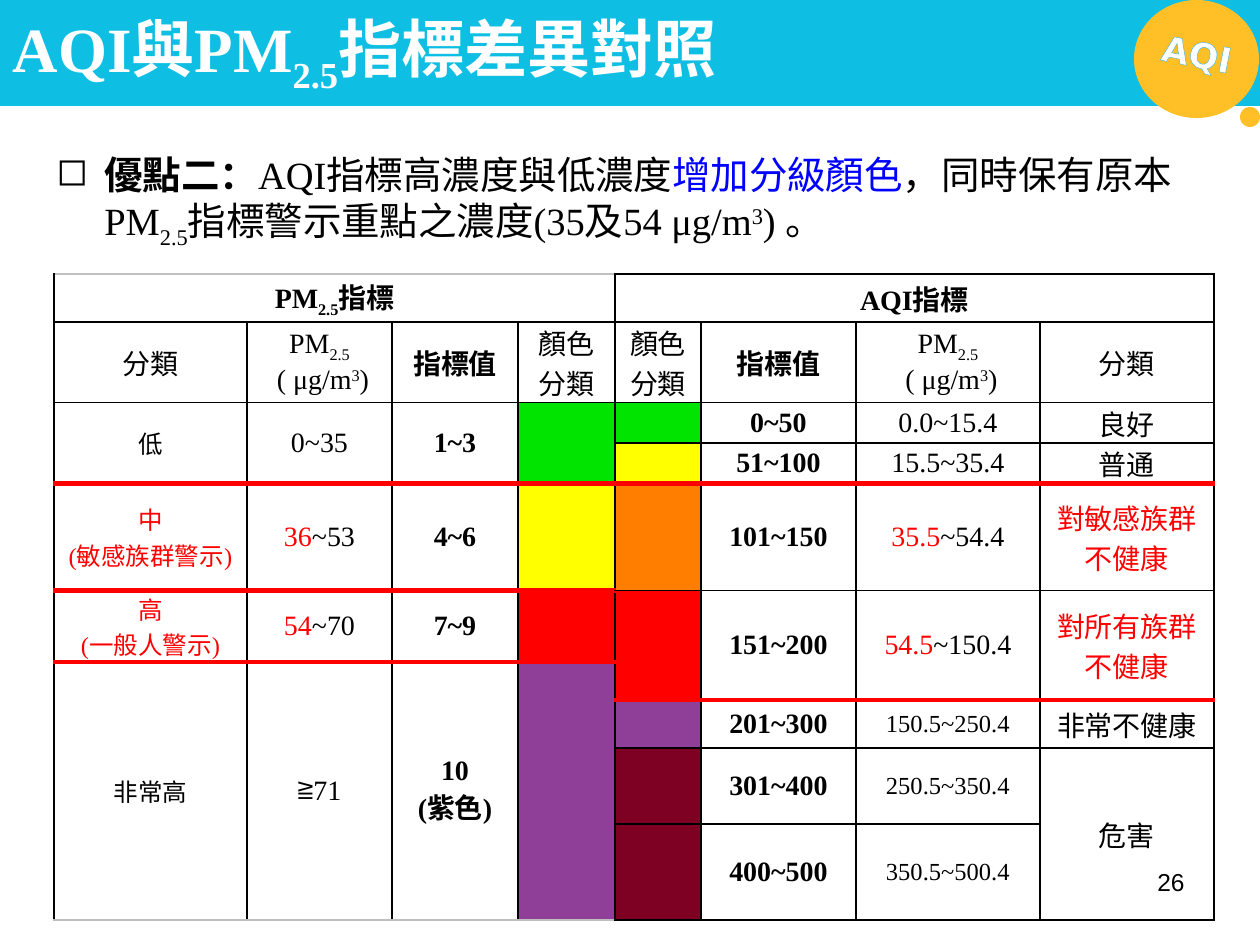
from dataclasses import dataclass

from lxml.etree import SubElement
from pptx import Presentation
from pptx.dml.color import RGBColor
from pptx.enum.shapes import MSO_SHAPE
from pptx.enum.text import MSO_ANCHOR, PP_ALIGN
from pptx.oxml.ns import qn
from pptx.util import Emu, Pt


@dataclass(frozen=True)
class Theme:
    """Colours, fonts and type sizes of the slide."""
    band: str = "0FBEE3"
    badge: str = "FEBF27"
    badge_outline: str = "4EB3CF"
    white: str = "FFFFFF"
    black: str = "000000"
    blue: str = "0000FF"
    red: str = "FF0000"
    grey: str = "BFBFBF"
    green: str = "00E400"
    yellow: str = "FFFF00"
    orange: str = "FF7E00"
    purple: str = "8F3F97"
    maroon: str = "7E0023"
    serif: str = "Times New Roman"
    sans: str = "Arial"
    badge_font: str = "DejaVu Sans"
    title: int = 36
    body: int = 22
    badge_size: int = 20
    table: int = 16
    small: int = 14


THEME = Theme()
SUB, SUP = -25, 30
COLUMNS = [193, 145, 126, 97, 86, 155, 184, 174]
ROWS = [48, 66, 33, 34, 96, 58, 38, 48, 76, 96]
LEFT_HALF, RIGHT_HALF = range(4), range(4, 8)
RED_LINES = {4: range(8), 5: LEFT_HALF, 6: LEFT_HALF, 7: RIGHT_HALF}
GREY_LINES = {0: LEFT_HALF, 10: LEFT_HALF}


@dataclass(frozen=True)
class Span:
    """A piece of text whose look differs from its neighbours."""
    text: str
    color: str = ""
    baseline: int = 0
    bold: bool = False


@dataclass(frozen=True)
class Entry:
    """One table cell with its paragraphs, fill and extent."""
    row: int
    column: int
    paragraphs: tuple = ()
    fill: str = THEME.white
    size: int = THEME.table
    bold: bool = False
    color: str = THEME.black
    height: int = 1
    width: int = 1


def px(length):
    """Turn slide pixels into EMU."""
    return Emu(round(length * 914400 / 126))


def add_runs(paragraph, spans, size, color=THEME.black, bold=False, font=THEME.serif):
    """Add each string or Span to the paragraph as a run."""
    for item in spans:
        span = Span(item) if isinstance(item, str) else item
        run = paragraph.add_run()
        run.text = span.text
        run.font.name = font
        run.font.size = Pt(size)
        run.font.bold = bold or span.bold
        run.font.color.rgb = RGBColor.from_string(span.color or color)
        if span.baseline:
            run._r.get_or_add_rPr().set("baseline", str(span.baseline * 1000))


def add_solid(slide, kind, box, color):
    """Add a plain filled shape without a line."""
    shape = slide.shapes.add_shape(kind, *map(px, box))
    shape.shadow.inherit = False
    shape.fill.solid()
    shape.fill.fore_color.rgb = RGBColor.from_string(color)
    shape.line.fill.background()


def add_text(slide, box, spans, size, align=PP_ALIGN.LEFT, **look):
    """Add a wrapping text box of one paragraph."""
    shape = slide.shapes.add_textbox(*map(px, box))
    shape.text_frame.word_wrap = True
    paragraph = shape.text_frame.paragraphs[0]
    paragraph.alignment = align
    add_runs(paragraph, spans, size, **look)
    return shape


def add_line(parent, tag, color, width):
    """Append a solid line element."""
    line = SubElement(parent, qn(tag), w=str(Pt(width)))
    fill = SubElement(line, qn("a:solidFill"))
    SubElement(fill, qn("a:srgbClr"), val=color)
    return line


def add_badge(slide):
    """Add the round badge with its tilted, outlined label."""
    add_solid(slide, MSO_SHAPE.OVAL, (1134, 0, 125, 118), THEME.badge)
    label = add_text(slide, (1130, 26, 134, 55), ["AQI"], THEME.badge_size, PP_ALIGN.CENTER,
                     color=THEME.white, bold=True, font=THEME.badge_font)
    label.rotation = 11.4
    properties = label.text_frame.paragraphs[0].runs[0]._r.get_or_add_rPr()
    properties.insert(0, add_line(properties, "a:ln", THEME.badge_outline, 0.8))
    add_solid(slide, MSO_SHAPE.OVAL, (1240, 107, 20, 20), THEME.badge)


def set_title(slide, spans):
    """Place and fill the title above the band."""
    title = slide.shapes.title
    title.left, title.top, title.width, title.height = map(px, (0, 0, 1126, 106))
    title.text_frame.vertical_anchor = MSO_ANCHOR.MIDDLE
    paragraph = title.text_frame.paragraphs[0]
    paragraph.alignment = PP_ALIGN.LEFT
    add_runs(paragraph, spans, THEME.title, THEME.white, True)
    slide.shapes._spTree.append(title._element)


def add_bullet(paragraph, character, indent):
    """Give the paragraph a hanging bullet."""
    properties = paragraph._p.get_or_add_pPr()
    properties.set("marL", str(px(indent)))
    properties.set("indent", str(-px(indent)))
    SubElement(properties, qn("a:buChar"), char=character)


def rule_style(boundary, column):
    """Return colour and width of a horizontal table rule."""
    if column in RED_LINES.get(boundary, ()):
        return THEME.red, 3
    return (THEME.grey if column in GREY_LINES.get(boundary, ()) else THEME.black), 1


def set_borders(table, entry):
    """Draw the outer edges of an entry on all cells it covers."""
    bottom, right = entry.row + entry.height, entry.column + entry.width
    for row in range(entry.row, bottom):
        for column in range(entry.column, right):
            origin = (row, column) == (entry.row, entry.column)
            properties = table.cell(row, column)._tc.get_or_add_tcPr()
            edges = [
                ("a:lnL", column == entry.column, (THEME.black, 1)),
                ("a:lnR", origin or column == right - 1, (THEME.black, 1)),
                ("a:lnT", row == entry.row, rule_style(entry.row, column)),
                ("a:lnB", origin or row == bottom - 1, rule_style(bottom, column)),
            ]
            for tag, visible, style in edges:
                if visible:
                    add_line(properties, tag, *style)


def fill_cell(table, entry):
    """Merge, border, colour and write one table entry."""
    cell = table.cell(entry.row, entry.column)
    if entry.height * entry.width > 1:
        cell.merge(table.cell(entry.row + entry.height - 1, entry.column + entry.width - 1))
    set_borders(table, entry)
    cell.fill.solid()
    cell.fill.fore_color.rgb = RGBColor.from_string(entry.fill)
    cell.vertical_anchor = MSO_ANCHOR.MIDDLE
    cell.margin_left = cell.margin_right = px(9)
    cell.margin_top = cell.margin_bottom = 0
    frame = cell.text_frame
    for index, spans in enumerate(entry.paragraphs):
        paragraph = frame.add_paragraph() if index else frame.paragraphs[0]
        paragraph.alignment = PP_ALIGN.CENTER
        if entry.row == 9:
            paragraph.space_after = Pt(10)
        add_runs(paragraph, spans, entry.size, entry.color, entry.bold)


def header_entries():
    """Return the entries of the two heading rows."""
    unit = (["PM", Span("2.5", baseline=SUB)], [" ( μg/m", Span("3", baseline=SUP), ")"])
    kind, value, color = (["分類"],), (["指標值"],), (["顏色"], ["分類"])
    labels = [kind, unit, value, color, color, value, unit, kind]
    heading = ["PM", Span("2.5", baseline=SUB), "指標"]
    return [Entry(0, 0, (heading,), bold=True, width=4),
            Entry(0, 4, (["AQI指標"],), bold=True, width=4),
            *(Entry(1, column, label, bold=label is value) for column, label in enumerate(labels))]


def level_entries():
    """Return the entries of both index scales."""
    def warned(start, end):
        return [Span(start, THEME.red), end]

    old_levels = [
        (2, 2, ["低"], ["0~35"], ["1~3"], THEME.green, THEME.black),
        (4, 1, ["中", "(敏感族群警示)"], warned("36", "~53"), ["4~6"], THEME.yellow, THEME.red),
        (5, 1, ["高", "(一般人警示)"], warned("54", "~70"), ["7~9"], THEME.red, THEME.red),
        (6, 4, ["非常高"], ["≧71"], ["10", "(紫色)"], THEME.purple, THEME.black),
    ]
    new_levels = [
        (2, 1, THEME.green, "0~50", ["0.0~15.4"], "良好", 1),
        (3, 1, THEME.yellow, "51~100", ["15.5~35.4"], "普通", 1),
        (4, 1, THEME.orange, "101~150", warned("35.5", "~54.4"), "對敏感族群不健康", 1),
        (5, 2, THEME.red, "151~200", warned("54.5", "~150.4"), "對所有族群不健康", 2),
        (7, 1, THEME.purple, "201~300", ["150.5~250.4"], "非常不健康", 1),
        (8, 1, THEME.maroon, "301~400", ["250.5~350.4"], "危害", 2),
        (9, 1, THEME.maroon, "400~500", ["350.5~500.4"], "", 0),
    ]
    for row, height, names, amount, values, fill, color in old_levels:
        yield Entry(row, 0, tuple([name] for name in names), size=THEME.small, color=color, height=height)
        yield Entry(row, 1, (amount,), height=height)
        yield Entry(row, 2, tuple([value] for value in values), bold=True, height=height)
        yield Entry(row, 3, fill=fill, height=height)
    for row, height, fill, value, amount, name, name_height in new_levels:
        yield Entry(row, 4, fill=fill, height=height)
        yield Entry(row, 5, ([value],), bold=True, height=height)
        yield Entry(row, 6, (amount,), size=THEME.small if row > 6 else THEME.table, height=height)
        if name:
            color = THEME.red if row in (4, 5) else THEME.black
            yield Entry(row, 7, ([name],), color=color, height=name_height)


def add_comparison(slide):
    """Add the table that sets the two scales side by side."""
    box = map(px, (54, 274, sum(COLUMNS), sum(ROWS)))
    table = slide.shapes.add_table(len(ROWS), len(COLUMNS), *box).table
    table.first_row = table.horz_banding = False
    for column, width in zip(table.columns, COLUMNS):
        column.width = px(width)
    for row, height in zip(table.rows, ROWS):
        row.height = px(height)
    for entry in [*header_entries(), *level_entries()]:
        fill_cell(table, entry)


def main():
    """Build and save the slide."""
    presentation = Presentation()
    presentation.slide_width, presentation.slide_height = px(1260), px(945)
    slide = presentation.slides.add_slide(presentation.slide_layouts[5])
    add_solid(slide, MSO_SHAPE.RECTANGLE, (0, 0, 1260, 106), THEME.band)
    add_badge(slide)
    set_title(slide, ["AQI與PM", Span("2.5", baseline=SUB), "指標差異對照"])
    add_comparison(slide)
    advantage = add_text(slide, (44, 145, 1216, 139), [
        Span("優點二：", bold=True), "AQI指標高濃度與低濃度", Span("增加分級顏色", THEME.blue),
        "，同時保有原本PM", Span("2.5", baseline=SUB), "指標警示重點之濃度(35及54 μg/m",
        Span("3", baseline=SUP), ") 。"], THEME.body)
    add_bullet(advantage.text_frame.paragraphs[0], "◻", 48)
    add_text(slide, (903, 861, 294, 66), ["26"], THEME.small, PP_ALIGN.RIGHT, font=THEME.sans)
    presentation.save("out.pptx")


if __name__ == "__main__":
    main()
